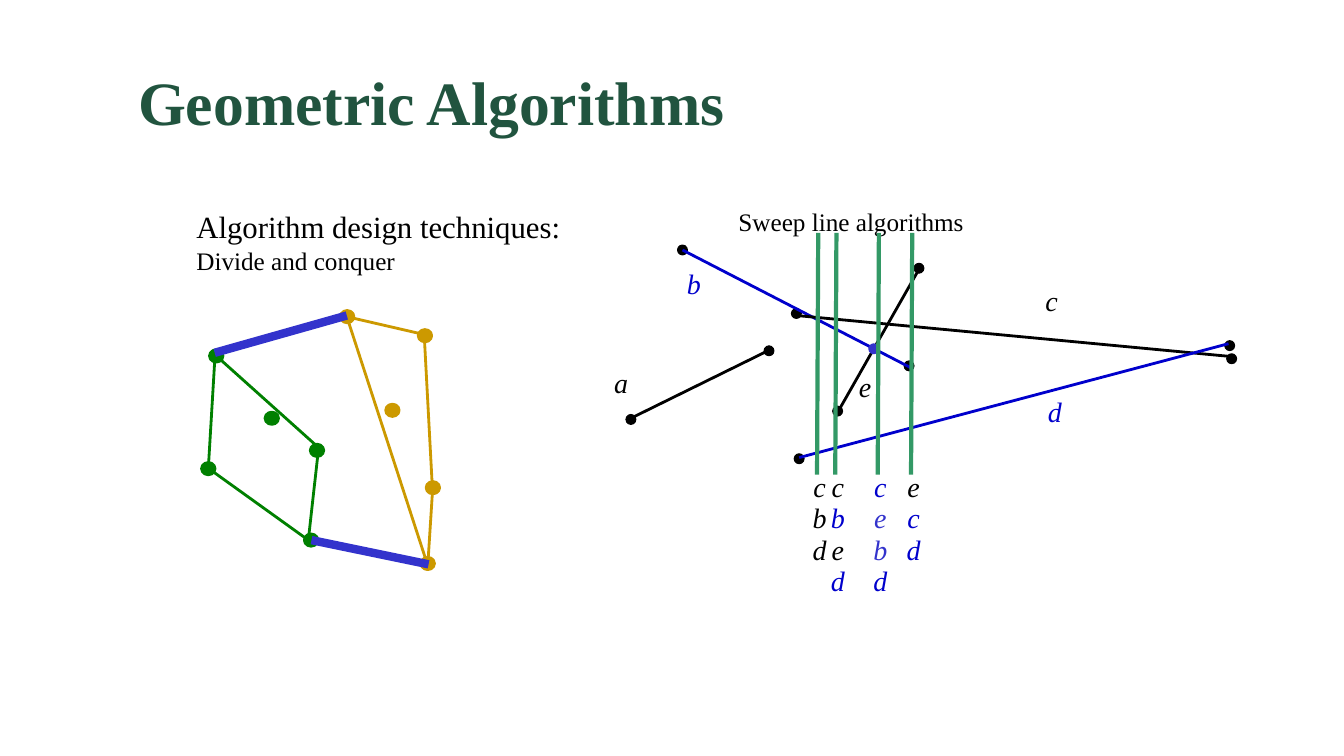
from dataclasses import dataclass

from lxml.etree import SubElement
from pptx import Presentation
from pptx.dml.color import RGBColor as Color
from pptx.enum.shapes import MSO_CONNECTOR as Connector, MSO_SHAPE as ShapeType
from pptx.enum.text import PP_ALIGN as Align
from pptx.oxml.ns import qn
from pptx.util import Cm, Pt


@dataclass(frozen=True)
class Theme:
    font: str = "Times New Roman"
    title_size: int = 44
    heading_size: int = 22
    body_size: int = 18
    label_size: int = 20
    title: str = "21543F"
    black: str = "000000"
    blue: str = "0000CC"
    violet: str = "3333CC"
    green: str = "008000"
    gold: str = "CC9900"
    sweep: str = "339966"


theme = Theme()
presentation = Presentation()
presentation.slide_width, presentation.slide_height = Cm(33.87), Cm(19.05)
slide = presentation.slides.add_slide(presentation.slide_layouts[6])


def add_text(left, top, width, height, lines, inset_top, label_spacing=None):
    """Write (text, size, colour) lines; label_spacing marks centred italic labels."""
    frame = slide.shapes.add_textbox(Cm(left), Cm(top), Cm(width), Cm(height)).text_frame
    frame.word_wrap = True
    frame.margin_top = Cm(inset_top)
    paragraph = frame.paragraphs[0]
    if label_spacing:
        paragraph.alignment = Align.CENTER
        paragraph.line_spacing = label_spacing
    for number, (text, size, color) in enumerate(lines):
        if number:
            paragraph.add_line_break()
        run = paragraph.add_run()
        run.text = text
        run.font.name = theme.font
        run.font.size = Pt(size)
        run.font.bold = size == theme.title_size
        run.font.italic = label_spacing is not None
        run.font.color.rgb = Color.from_string(color)


def add_line(start, end, color, weight):
    line = slide.shapes.add_connector(Connector.STRAIGHT, *map(Cm, start + end))
    line.line.color.rgb = Color.from_string(color)
    line.line.width = Pt(weight)
    SubElement(line.element.spPr, qn("a:effectLst"))


# Title and headings
add_text(3.23, 1.35, 26.39, 2.13,
         [("Geometric Algorithms", theme.title_size, theme.title)], 0.25)
add_text(4.7, 5.16, 9.98, 2.11,
         [("Algorithm design techniques:", theme.heading_size, theme.black),
          ("Divide and conquer", theme.body_size, theme.black)], 0.08)
add_text(18.36, 5.13, 7.42, 2.11,
         [("Sweep line algorithms", theme.body_size, theme.black)], 0.08)

# Points: centres, colour, width, height, outline
point_groups = [
    ([(5.45, 8.97), (5.25, 11.81), (7.84, 13.61), (6.85, 10.54), (7.99, 11.35)],
     theme.green, 0.33, 0.3, 2.25),
    ([(8.75, 7.98), (9.89, 10.34), (10.71, 8.46), (10.91, 12.29), (10.78, 14.2)],
     theme.gold, 0.33, 0.3, 2.25),
    ([(21.11, 10.36), (23.16, 6.76), (20.14, 11.56), (30.99, 8.71), (31.04, 9.04),
      (20.07, 7.9), (19.38, 8.84), (17.2, 6.3), (15.9, 10.57), (22.91, 9.22)],
     theme.black, 0.25, 0.25, 0.75),
]
crossing = ([(22.02, 8.79)], theme.violet, 0.25, 0.25, 0.75)


def add_points(centres, color, width, height, outline):
    for x, y in centres:
        point = slide.shapes.add_shape(ShapeType.OVAL, Cm(x - width / 2), Cm(y - height / 2),
                                       Cm(width), Cm(height))
        point.shadow.inherit = False
        point.fill.solid()
        point.fill.fore_color.rgb = Color.from_string(color)
        point.line.color.rgb = Color.from_string(color)
        point.line.width = Pt(outline)


for group in point_groups:
    add_points(*group)

# Two convex hulls and the bridges that merge them
hulls = [
    (theme.green, [(5.42, 8.94), (5.25, 11.8), (7.77, 13.61), (8.03, 11.28)]),
    (theme.gold, [(8.74, 7.98), (10.78, 14.25), (10.9, 12.37), (10.69, 8.43)]),
]
for color, corners in hulls:
    for start, end in zip(corners, corners[1:] + corners[:1]):
        add_line(start, end, color, 2)
for start, end in [((5.41, 8.89), (8.74, 7.95)), ((7.85, 13.61), (10.8, 14.22))]:
    add_line(start, end, theme.violet, 6)

# Segments with their names: start, end, label corner
segments = [
    ("a", theme.black, (15.9, 10.54), (19.41, 8.81), (15.11, 9.32)),
    ("b", theme.blue, (17.2, 6.3), (22.96, 9.27), (16.94, 6.81)),
    ("e", theme.black, (21.11, 10.39), (23.19, 6.73), (21.26, 9.42)),
    ("c", theme.black, (20.07, 7.95), (31.09, 8.99), (25.96, 7.24)),
    ("d", theme.blue, (20.14, 11.53), (30.96, 8.66), (26.04, 10.03)),
]
for name, color, start, end, corner in segments:
    add_line(start, end, color, 2)
    add_text(*corner, 1.09, 1.09, [(name, theme.label_size, color)], 0.2, 0.6)
add_points(*crossing)

# Sweep lines, each with the segment order below it
sweeps = [
    (20.62, "cbd", [theme.black] * 3),
    (21.08, "cbed", [theme.black, theme.blue] * 2),
    (22.15, "cebd", [theme.blue, theme.violet, theme.violet, theme.blue]),
    (22.99, "ecd", [theme.black, theme.blue, theme.blue]),
]
for x, order, colors in sweeps:
    add_line((x, 5.87), (x - 0.03, 11.96), theme.sweep, 3)
    lines = [(name, theme.label_size, color) for name, color in zip(order, colors)]
    add_text(x - 0.51, 11.76, 1.09, 0.76 * len(order) + 0.26, lines, 0.13, 0.94)

presentation.save("out.pptx")
